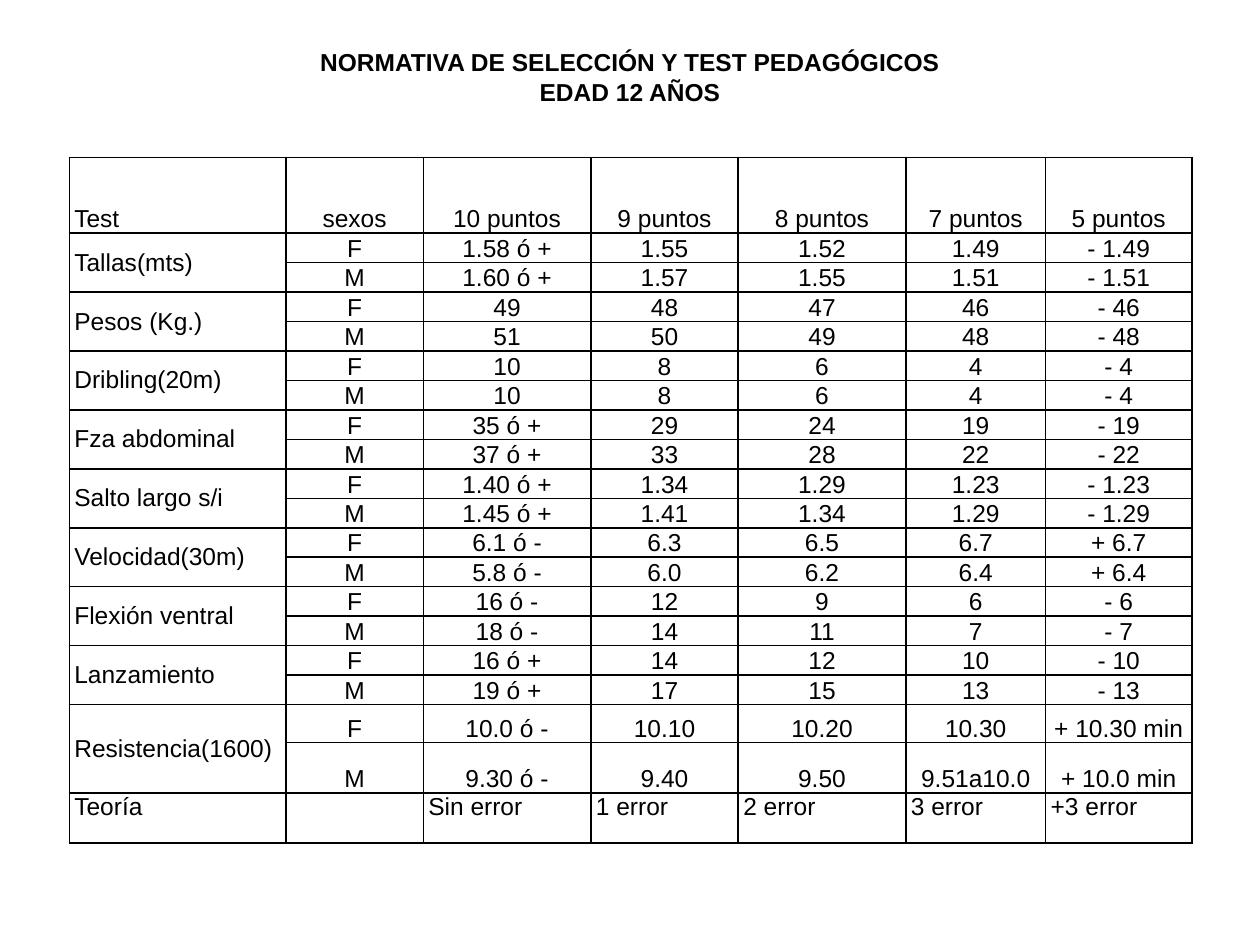
from dataclasses import dataclass

import pptx
import pptx.dml.color
import pptx.enum.text
import pptx.oxml
import pptx.oxml.ns
import pptx.slide
import pptx.table
import pptx.text.text
import pptx.util
from pptx.util import Inches

Align = pptx.enum.text.PP_ALIGN
Anchor = pptx.enum.text.MSO_ANCHOR


@dataclass(frozen=True)
class Theme:
    font: str = "Arial"
    size: int = 14
    ink: str = "000000"
    border: int = 1


@dataclass(frozen=True)
class Test:
    """One test with the marks of girls (F) and boys (M), from 10 to 5 points."""
    name: str
    girls: tuple[str, ...]
    boys: tuple[str, ...]


THEME = Theme()
TITLE = ("NORMATIVA DE SELECCIÓN Y TEST PEDAGÓGICOS", "EDAD 12 AÑOS")
HEADER = ("Test", "sexos", "10 puntos", "9 puntos", "8 puntos", "7 puntos", "5 puntos")
TESTS = (
    Test("Tallas(mts)", ("1.58 ó +", "1.55", "1.52", "1.49", "- 1.49"),
         ("1.60 ó +", "1.57", "1.55", "1.51", "- 1.51")),
    Test("Pesos (Kg.)", ("49", "48", "47", "46", "- 46"), ("51", "50", "49", "48", "- 48")),
    Test("Dribling(20m)", ("10", "8", "6", "4", "- 4"), ("10", "8", "6", "4", "- 4")),
    Test("Fza abdominal", ("35 ó +", "29", "24", "19", "- 19"),
         ("37 ó +", "33", "28", "22", "- 22")),
    Test("Salto largo s/i", ("1.40 ó +", "1.34", "1.29", "1.23", "- 1.23"),
         ("1.45 ó +", "1.41", "1.34", "1.29", "- 1.29")),
    Test("Velocidad(30m)", ("6.1 ó -", "6.3", "6.5", "6.7", "+ 6.7"),
         ("5.8 ó -", "6.0", "6.2", "6.4", "+ 6.4")),
    Test("Flexión ventral", ("16 ó -", "12", "9", "6", "- 6"),
         ("18 ó -", "14", "11", "7", "- 7")),
    Test("Lanzamiento", ("16 ó +", "14", "12", "10", "- 10"),
         ("19 ó +", "17", "15", "13", "- 13")),
    Test("Resistencia(1600)", ("10.0 ó -", "10.10", "10.20", "10.30", "+ 10.30 min"),
         ("9.30 ó -", "9.40", "9.50", "9.51a10.0", "+ 10.0 min")),
)
THEORY = ("Teoría", "", "Sin error", "1 error", "2 error", "3 error", "+3 error")

COLUMN_WIDTHS = (1.72, 1.09, 1.33, 1.17, 1.33, 1.11, 1.16)
ROW_HEIGHTS = (0.6, *[0.23] * 16, 0.3, 0.4, 0.4)


def add_run(paragraph: pptx.text.text._Paragraph, text: str, bold: bool = False) -> None:
    run = paragraph.add_run()
    run.text = text
    run.font.name = THEME.font
    run.font.size = pptx.util.Pt(THEME.size)
    run.font.bold = bold
    run.font.color.rgb = pptx.dml.color.RGBColor.from_string(THEME.ink)


def add_title(slide: pptx.slide.Slide) -> None:
    title = slide.shapes.add_textbox(Inches(0), Inches(0.36), Inches(10), Inches(0.5))
    frame = title.text_frame
    frame.word_wrap = False
    frame.auto_size = pptx.enum.text.MSO_AUTO_SIZE.SHAPE_TO_FIT_TEXT
    frame.vertical_anchor = Anchor.MIDDLE
    for index, line in enumerate(TITLE):
        paragraph = frame.add_paragraph() if index else frame.paragraphs[0]
        paragraph.alignment = Align.CENTER
        add_run(paragraph, line, bold=True)


def style_cell(cell: pptx.table._Cell) -> None:
    """Set insets, borders and an empty fill."""
    cell.margin_left = cell.margin_right = Inches(0.04)
    cell.margin_top = cell.margin_bottom = 0
    properties = cell._tc.get_or_add_tcPr()
    for side in ("lnL", "lnR", "lnT", "lnB"):
        properties.append(pptx.oxml.parse_xml(
            f'<a:{side} {pptx.oxml.ns.nsdecls("a")} w="{pptx.util.Pt(THEME.border)}">'
            f'<a:solidFill><a:srgbClr val="{THEME.ink}"/></a:solidFill></a:{side}>'))
    cell.fill.background()


def write_cell(cell: pptx.table._Cell, text: str, align: Align, anchor: Anchor) -> None:
    cell.vertical_anchor = anchor
    paragraph = cell.text_frame.paragraphs[0]
    paragraph.alignment = align
    if text:
        add_run(paragraph, text)


def write_row(table: pptx.table.Table, row: int, first_column: int,
              texts: tuple[str, ...]) -> None:
    """Write centred texts that stand on the bottom of the row."""
    for column, text in enumerate(texts, first_column):
        write_cell(table.cell(row, column), text, Align.CENTER, Anchor.BOTTOM)


def add_standards(slide: pptx.slide.Slide) -> None:
    table = slide.shapes.add_table(
        len(ROW_HEIGHTS), len(COLUMN_WIDTHS), Inches(0.55), Inches(1.25),
        Inches(sum(COLUMN_WIDTHS)), Inches(sum(ROW_HEIGHTS))).table
    table.first_row = table.horz_banding = False
    for column, width in zip(table.columns, COLUMN_WIDTHS):
        column.width = Inches(width)
    for row, height in zip(table.rows, ROW_HEIGHTS):
        row.height = Inches(height)
    for cell in table.iter_cells():
        style_cell(cell)

    write_cell(table.cell(0, 0), HEADER[0], Align.LEFT, Anchor.BOTTOM)
    write_row(table, 0, 1, HEADER[1:])
    for index, test in enumerate(TESTS):
        top = 1 + 2 * index
        table.cell(top, 0).merge(table.cell(top + 1, 0))
        write_cell(table.cell(top, 0), test.name, Align.LEFT, Anchor.MIDDLE)
        write_row(table, top, 1, ("F", *test.girls))
        write_row(table, top + 1, 1, ("M", *test.boys))
    for column, text in enumerate(THEORY):
        write_cell(table.cell(len(ROW_HEIGHTS) - 1, column), text, Align.LEFT, Anchor.TOP)


def main() -> None:
    presentation = pptx.Presentation()
    presentation.slide_width, presentation.slide_height = Inches(10), Inches(7.5)
    slide = presentation.slides.add_slide(presentation.slide_layouts[6])
    add_title(slide)
    add_standards(slide)
    presentation.save("out.pptx")


if __name__ == "__main__":
    main()
